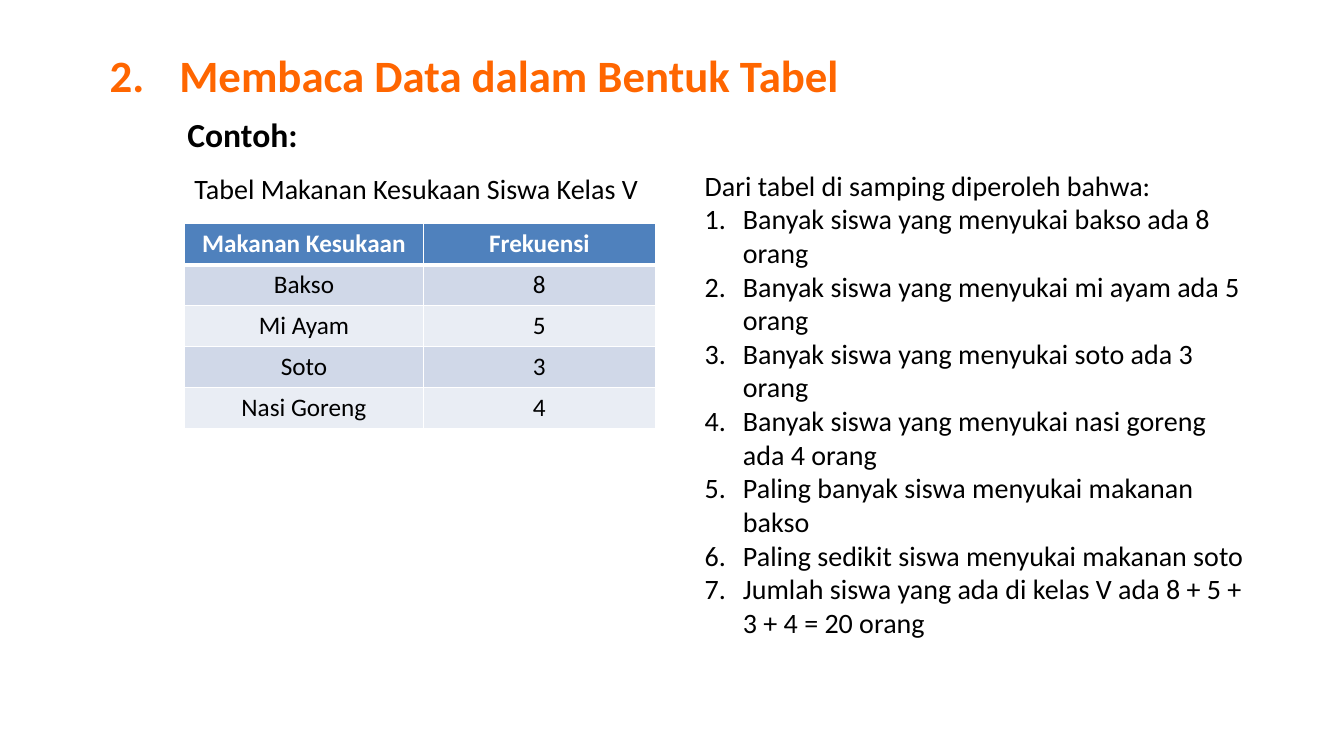
"""Build a slide on reading data from a table."""
from dataclasses import dataclass

from lxml.etree import SubElement
from pptx import Presentation
from pptx.dml.color import RGBColor
from pptx.enum.text import MSO_ANCHOR, MSO_AUTO_SIZE, PP_ALIGN
from pptx.oxml import parse_xml
from pptx.oxml.ns import nsdecls, qn
from pptx.util import Inches, Pt


@dataclass(frozen=True)
class Theme:
    """Hold the colours, type sizes and font."""
    font: str = "Calibri"
    orange: str = "FF6600"
    black: str = "000000"
    white: str = "FFFFFF"
    blue: str = "4F81BD"
    bands: tuple = ("D0D8E8", "E9EDF4")
    title: int = 32
    head: int = 24
    body: int = 20
    cell: int = 18


class Board:
    """Draw styled items on one slide."""

    def __init__(self, theme, slide):
        """Keep the theme and the slide."""
        self.theme = theme
        self.slide = slide

    def label(self, para, words, size, color, bold=False):
        """Add a styled run to a paragraph."""
        run = para.add_run()
        run.text = words
        style = {"name": self.theme.font, "size": Pt(size), "bold": bold}
        for key, value in style.items():
            setattr(run.font, key, value)
        run.font.color.rgb = RGBColor.from_string(color)

    def text(self, place, words, size, color, bold=False, wrap=False):
        """Add a text box and return its text frame."""
        frame = self.slide.shapes.add_textbox(*map(Inches, place)).text_frame
        form = {"word_wrap": wrap, "auto_size": MSO_AUTO_SIZE.SHAPE_TO_FIT_TEXT}
        for key, value in form.items():
            setattr(frame, key, value)
        self.label(frame.paragraphs[0], words, size, color, bold)
        return frame

    def title(self, place, words, stop):
        """Add the title with a tab after its number."""
        frame = self.text(place, words, self.theme.title, self.theme.orange, True)
        tabs = SubElement(frame.paragraphs[0]._p.get_or_add_pPr(), qn("a:tabLst"))
        SubElement(tabs, qn("a:tab"), pos=str(Inches(stop)), algn="l")

    def steps(self, place, lead, items, indent):
        """Add a lead line and a numbered list."""
        look = (self.theme.body, self.theme.black)
        frame = self.text(place, lead, *look, wrap=True)
        for item in items:
            para = frame.add_paragraph()
            props = para._p.get_or_add_pPr()
            for key, value in {"marL": indent, "indent": -indent}.items():
                props.set(key, str(Inches(value)))
            SubElement(props, qn("a:buFont"), typeface="+mj-lt")
            SubElement(props, qn("a:buAutoNum"), type="arabicPeriod")
            self.label(para, item, *look)

    def edge(self, cell, row):
        """Draw the four borders of a cell."""
        thick = {0: "lnB", 1: "lnT"}.get(row)
        for spot, side in enumerate(("lnL", "lnR", "lnT", "lnB")):
            width = Pt(3 if side == thick else 1)
            line = parse_xml(
                f'<a:{side} {nsdecls("a")} w="{width}"><a:solidFill>'
                f'<a:srgbClr val="{self.theme.white}"/></a:solidFill></a:{side}>')
            cell._tc.get_or_add_tcPr().insert(spot, line)

    def table(self, place, rows, widths):
        """Add a table with a header and banded rows."""
        theme = self.theme
        grid = self.slide.shapes.add_table(
            len(rows), len(widths), *map(Inches, place)).table
        for col, width in zip(grid.columns, widths):
            col.width = Inches(width)
        for i, row in enumerate(rows):
            top = i == 0
            fill = theme.blue if top else theme.bands[(i - 1) % 2]
            for j, words in enumerate(row):
                cell = grid.cell(i, j)
                cell.vertical_anchor = MSO_ANCHOR.MIDDLE
                cell.fill.solid()
                cell.fill.fore_color.rgb = RGBColor.from_string(fill)
                para = cell.text_frame.paragraphs[0]
                para.alignment = PP_ALIGN.CENTER
                color = theme.white if top else theme.black
                self.label(para, words, theme.cell, color, top)
                self.edge(cell, i)


def main():
    """Build and save the slide."""
    deck = Presentation()
    deck.slide_width, deck.slide_height = Inches(13.33), Inches(7.5)
    theme = Theme()
    board = Board(theme, deck.slides.add_slide(deck.slide_layouts[6]))
    board.title((0.99, 0.42, 7.5, 0.64),
                "2.\tMembaca Data dalam Bentuk Tabel", 0.69)
    board.text((1.76, 1.08, 1.31, 0.5), "Contoh:", theme.head, theme.black, True)
    board.table((1.83, 2.22, 4.67, 2.03), [
        ("Makanan Kesukaan", "Frekuensi"),
        ("Bakso", "8"),
        ("Mi Ayam", "5"),
        ("Soto", "3"),
        ("Nasi Goreng", "4"),
    ], (2.37, 2.3))
    board.steps((6.89, 1.62, 5.55, 4.81), "Dari tabel di samping diperoleh bahwa:", [
        "Banyak siswa yang menyukai bakso ada 8 orang",
        "Banyak siswa yang menyukai mi ayam ada 5 orang",
        "Banyak siswa yang menyukai soto ada 3 orang",
        "Banyak siswa yang menyukai nasi goreng ada 4 orang",
        "Paling banyak siswa menyukai makanan bakso",
        "Paling sedikit siswa menyukai makanan soto",
        "Jumlah siswa yang ada di kelas V ada 8 + 5 + 3 + 4 = 20 orang",
    ], 0.38)
    board.text((1.83, 1.65, 4.71, 0.44), "Tabel Makanan Kesukaan Siswa Kelas V",
               theme.body, theme.black)
    deck.save("out.pptx")


if __name__ == "__main__":
    main()
